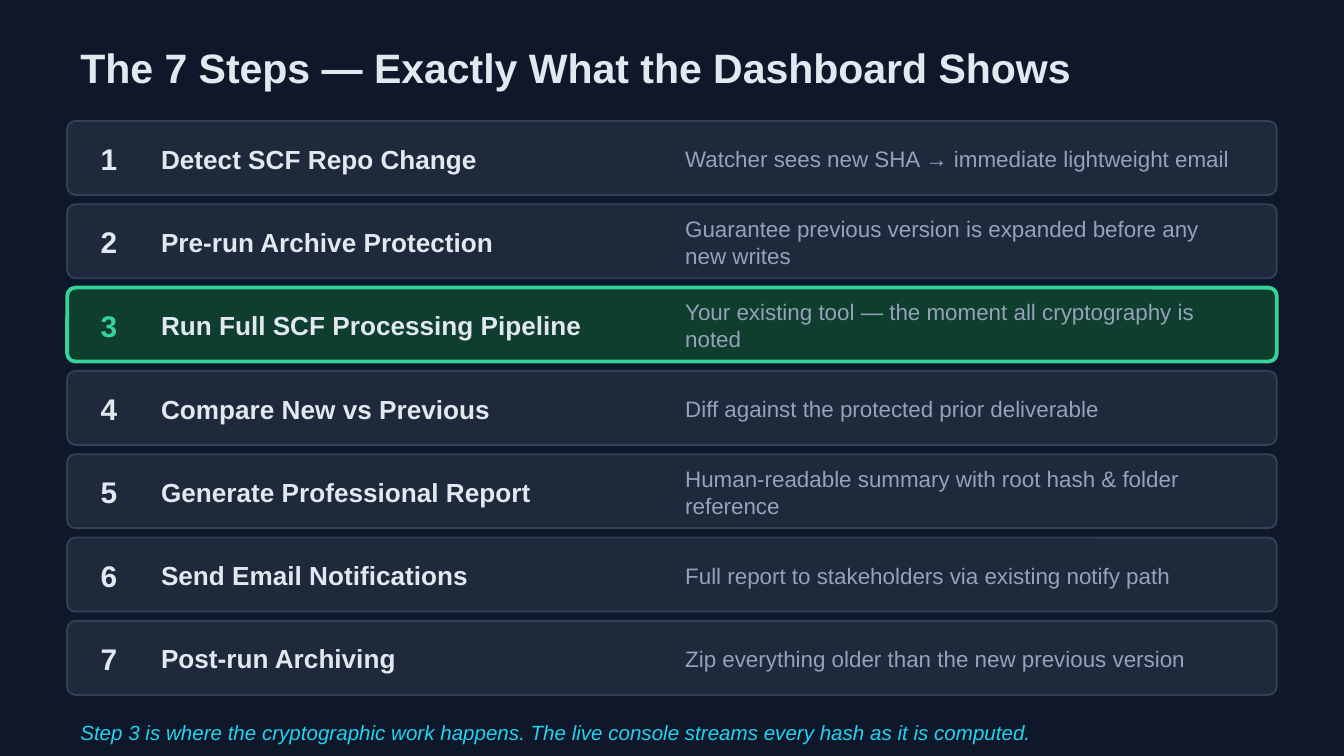
from pptx import Presentation, util as u
from pptx.dml.color import RGBColor
from pptx.enum import shapes, text

PX = u.Inches(1) // 200
SLIDE_W, SLIDE_H = 2000, 1125
FONT = "Arial"

NAVY = RGBColor(0x0F, 0x17, 0x2A)
SLATE = RGBColor(0x1E, 0x29, 0x3B)
BORDER = RGBColor(0x33, 0x41, 0x55)
LIGHT = RGBColor(0xE2, 0xE8, 0xF0)
MUTED = RGBColor(0x94, 0xA3, 0xB8)
DARK_GREEN = RGBColor(0x0F, 0x3D, 0x2E)
GREEN = RGBColor(0x34, 0xD3, 0x99)
CYAN = RGBColor(0x22, 0xD3, 0xEE)

STEPS = [
    ("Detect SCF Repo Change", "Watcher sees new SHA → immediate lightweight email"),
    ("Pre-run Archive Protection", "Guarantee previous version is expanded before any new writes"),
    ("Run Full SCF Processing Pipeline", "Your existing tool — the moment all cryptography is noted"),
    ("Compare New vs Previous", "Diff against the protected prior deliverable"),
    ("Generate Professional Report", "Human-readable summary with root hash & folder reference"),
    ("Send Email Notifications", "Full report to stakeholders via existing notify path"),
    ("Post-run Archiving", "Zip everything older than the new previous version"),
]
KEY_STEP = 3
ROW_H, ROW_PITCH = 110, 124


def add_panel(s, kind, x, y, w, h, fill):
    sp = s.shapes.add_shape(kind, x * PX, y * PX, w * PX, h * PX)
    sp.shadow.inherit = False
    sp.fill.solid()
    sp.fill.fore_color.rgb = fill
    sp.line.fill.background()
    return sp


def add_label(s, x, y, w, h, words, size, color, bold=False, italic=False):
    tf = s.shapes.add_textbox(x * PX, y * PX, w * PX, h * PX).text_frame
    tf.word_wrap = True
    tf.vertical_anchor = text.MSO_ANCHOR.MIDDLE
    p = tf.paragraphs[0]
    p.text = words
    p.font.name, p.font.size, p.font.color.rgb = FONT, u.Pt(size), color
    p.font.bold, p.font.italic = bold, italic


def add_step(s, x, y, w, h, number, name, detail):
    """One row: rounded panel with number, name and detail."""
    is_key = number == KEY_STEP
    sp = add_panel(s, shapes.MSO_SHAPE.ROUNDED_RECTANGLE, x, y, w, h,
                   DARK_GREEN if is_key else SLATE)
    sp.adjustments[0] = 0.11
    sp.line.color.rgb = GREEN if is_key else BORDER
    sp.line.width = u.Pt(2 if is_key else 1)

    top, label_h = y + 16, 80
    add_label(s, x + 30, top, 80, label_h, str(number), 16,
              GREEN if is_key else LIGHT, bold=True)
    add_label(s, x + 120, top, 760, label_h, name, 14, LIGHT, bold=True)
    add_label(s, x + 900, top, 860, label_h, detail, 12, MUTED)


def add_steps(s, x, y, w):
    for i, (name, detail) in enumerate(STEPS):
        add_step(s, x, y + i * ROW_PITCH, w, ROW_H, i + 1, name, detail)


def main():
    prs = Presentation()
    prs.slide_width, prs.slide_height = SLIDE_W * PX, SLIDE_H * PX
    s = prs.slides.add_slide(prs.slide_layouts[6])
    add_panel(s, shapes.MSO_SHAPE.RECTANGLE, 0, 0, SLIDE_W, SLIDE_H, NAVY)
    add_label(s, 100, 50, 1800, 100,
              "The 7 Steps — Exactly What the Dashboard Shows", 22, LIGHT, bold=True)
    add_steps(s, 100, 180, 1800)
    add_label(s, 100, 1060, 1800, 60,
              "Step 3 is where the cryptographic work happens. "
              "The live console streams every hash as it is computed.",
              11, CYAN, italic=True)
    prs.save("out.pptx")


if __name__ == "__main__":
    main()
